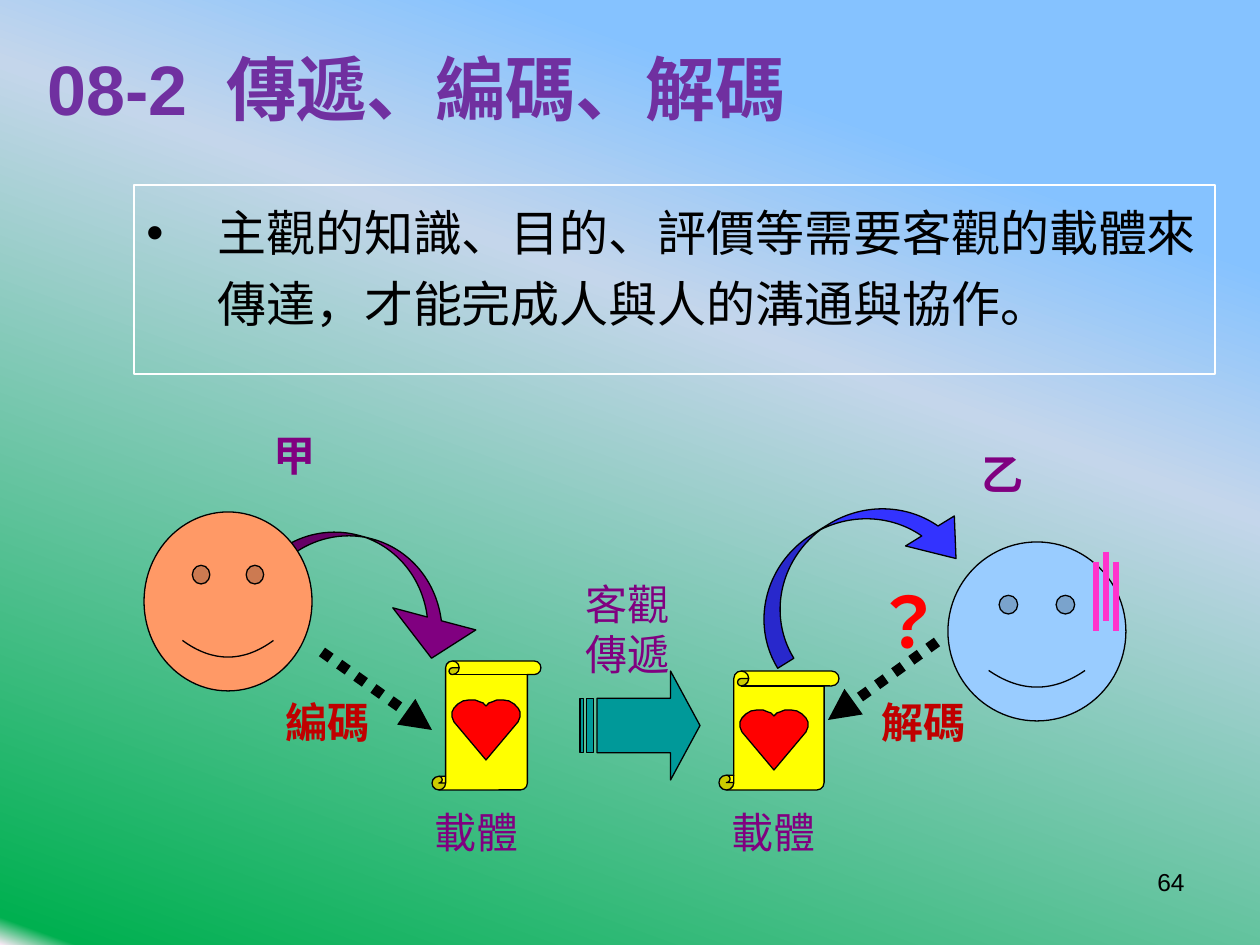
from dataclasses import dataclass

from lxml import etree
from pptx import Presentation
from pptx.dml.color import RGBColor
from pptx.enum.dml import MSO_LINE
from pptx.enum.shapes import MSO_CONNECTOR, MSO_SHAPE
from pptx.enum.text import MSO_ANCHOR, PP_ALIGN
from pptx.oxml.ns import qn
from pptx.util import Emu, Pt

EMU_PER_PX = 914400 / 126
BLANK_LAYOUT = 6
STRAIGHT = MSO_CONNECTOR.STRAIGHT
SCROLL = MSO_SHAPE.VERTICAL_SCROLL
CURVED_ARROW = MSO_SHAPE.CURVED_DOWN_ARROW
STRIPED_ARROW = MSO_SHAPE.STRIPED_RIGHT_ARROW
FACE = MSO_SHAPE.SMILEY_FACE
DOTTED = MSO_LINE.ROUND_DOT
LEFT, RIGHT = PP_ALIGN.LEFT, PP_ALIGN.RIGHT
TOP, MIDDLE = MSO_ANCHOR.TOP, MSO_ANCHOR.MIDDLE

LATIN_FONT = "Arial"
CJK_FONT = "Noto Sans CJK TC"

BLACK = RGBColor(0x00, 0x00, 0x00)
WHITE = RGBColor(0xFF, 0xFF, 0xFF)
TITLE_PURPLE = RGBColor(0x70, 0x30, 0xA0)
PURPLE = RGBColor(0x80, 0x00, 0x80)
DARK_RED = RGBColor(0xC0, 0x00, 0x00)
RED = RGBColor(0xFF, 0x00, 0x00)
YELLOW = RGBColor(0xFF, 0xFF, 0x00)
TEAL = RGBColor(0x00, 0x99, 0x99)
BLUE = RGBColor(0x33, 0x33, 0xFF)
LIGHT_BLUE = RGBColor(0x99, 0xCC, 0xFF)
ORANGE = RGBColor(0xFF, 0x99, 0x66)
PINK = RGBColor(0xFF, 0x33, 0xCC)

# Percent along the gradient, colour
BACKGROUND_STOPS = (
    (19, RGBColor(0x85, 0xC2, 0xFF)),
    (37, RGBColor(0xC4, 0xD6, 0xEB)),
    (98, RGBColor(0x00, 0xB0, 0x50)),
    (100, RGBColor(0xFF, 0xEB, 0xFA)),
)

# Right half of the heart, from the notch to the tip
HEART_HALF = ((0, 6), (3, 3), (6, 2), (11, 0), (17, 0), (23, 1), (28, 4),
              (32, 8), (34, 12), (34, 17), (32, 22), (0, 60))


@dataclass(frozen=True)
class Figure:
    preset: MSO_SHAPE
    box: tuple[int, int, int, int]
    fill: RGBColor
    rotation: float = 0
    adjustments: tuple[float, ...] = ()


@dataclass(frozen=True)
class Stroke:
    start: tuple[int, int]
    end: tuple[int, int]
    color: RGBColor
    width: int
    dotted_arrow: bool = False


@dataclass(frozen=True)
class Label:
    lines: tuple[str, ...]
    box: tuple[int, int, int, int]
    color: RGBColor
    size: int = 24
    bold: bool = False
    align: PP_ALIGN = RIGHT
    font: str = CJK_FONT
    wrap: bool = False
    anchor: MSO_ANCHOR = TOP


FIGURES = (
    Figure(SCROLL, (432, 661, 109, 129), YELLOW),
    Figure(CURVED_ARROW, (249, 540, 241, 100), PURPLE, 14.9, (0.146, 0.859, 0.387)),
    Figure(FACE, (948, 542, 178, 179), LIGHT_BLUE),
    Figure(FACE, (144, 512, 168, 179), ORANGE),
    Figure(STRIPED_ARROW, (580, 671, 120, 109), TEAL, 0, (0.5, 0.27)),
    Figure(SCROLL, (719, 671, 120, 119), YELLOW),
    Figure(CURVED_ARROW, (735, 517, 238, 96), BLUE, 328.4, (0.198, 0.597, 0.387)),
)

HEARTS = ((486, 700), (774, 710))

STROKES = (
    Stroke((937, 642), (828, 720), BLACK, 6, True),
    Stroke((322, 652), (432, 730), BLACK, 6, True),
    *(Stroke((x, y), (x, y + 69), PINK, 3)
      for x, y in ((1096, 562), (1106, 552), (1116, 562))),
)

TITLE = Label(("08-2  傳遞、編碼、解碼",), (35, 0, 1134, 175), TITLE_PURPLE, 40,
              True, LEFT, LATIN_FONT, True, MIDDLE)
BODY = Label(("主觀的知識、目的、評價等需要客觀的載體來傳達，才能完成人與人的溝通與協作。",),
             (134, 185, 1081, 189), BLACK, 28, False, LEFT, LATIN_FONT, True)
LABELS = (
    Label(("？",), (838, 572, 118, 97), RED, 40, True, wrap=True),
    Label(("客觀", "傳遞"), (571, 572, 111, 115), PURPLE),
    Label(("甲",), (260, 423, 68, 63), PURPLE, bold=True),
    Label(("乙",), (968, 442, 68, 63), PURPLE, bold=True),
    Label(("編碼",), (272, 690, 110, 63), DARK_RED, bold=True),
    Label(("解碼",), (868, 690, 110, 63), DARK_RED, bold=True),
    Label(("載體",), (422, 800, 111, 64), PURPLE, align=LEFT),
    Label(("載體",), (719, 800, 111, 64), PURPLE, align=LEFT),
    Label(("64",), (903, 861, 294, 66), BLACK, 14, font=LATIN_FONT, wrap=True),
)


def px(length: int) -> Emu:
    return Emu(round(length * EMU_PER_PX))


def paint_background(slide) -> None:
    fill = slide.background.fill
    fill.gradient()
    fill.gradient_angle = 250
    stops = slide.element.find(".//" + qn("a:gsLst"))
    for stop in list(stops):
        stops.remove(stop)
    for percent, color in BACKGROUND_STOPS:
        stop = etree.SubElement(stops, qn("a:gs"), pos=str(percent * 1000))
        etree.SubElement(stop, qn("a:srgbClr"), val=str(color))


def style_shape(shape, fill: RGBColor) -> None:
    shape.shadow.inherit = False
    shape.fill.solid()
    shape.fill.fore_color.rgb = fill
    shape.line.color.rgb = BLACK
    shape.line.width = Pt(0.75)


def add_figure(slide, figure: Figure) -> None:
    shape = slide.shapes.add_shape(figure.preset, *map(px, figure.box))
    shape.rotation = figure.rotation
    for index, value in enumerate(figure.adjustments):
        shape.adjustments[index] = value
    style_shape(shape, figure.fill)


def add_heart(slide, center: int, top: int) -> None:
    mirrored = [(-x, y) for x, y in HEART_HALF[-2:0:-1]]
    outline = [(center + x, top + y) for x, y in (*HEART_HALF, *mirrored)]
    builder = slide.shapes.build_freeform(*outline[0], scale=EMU_PER_PX)
    builder.add_line_segments(outline[1:], close=True)
    style_shape(builder.convert_to_shape(), RED)


def add_stroke(slide, stroke: Stroke) -> None:
    connector = slide.shapes.add_connector(
        STRAIGHT, *map(px, (*stroke.start, *stroke.end)))
    line = connector.line
    line.color.rgb = stroke.color
    line.width = Pt(stroke.width)
    if stroke.dotted_arrow:
        line.dash_style = DOTTED
        outline = connector.element.spPr.find(qn("a:ln"))
        etree.SubElement(outline, qn("a:tailEnd"), type="triangle")
    etree.SubElement(connector.element.spPr, qn("a:effectLst"))


def add_label(slide, label: Label):
    shape = slide.shapes.add_textbox(*map(px, label.box))
    frame = shape.text_frame
    frame.word_wrap = label.wrap
    frame.vertical_anchor = label.anchor
    for index, text in enumerate(label.lines):
        paragraph = frame.add_paragraph() if index else frame.paragraphs[0]
        paragraph.alignment = label.align
        run = paragraph.add_run()
        run.text = text
        font = run.font
        font.name = label.font
        font.size = Pt(label.size)
        font.bold = label.bold
        font.color.rgb = label.color
        etree.SubElement(run.font._element, qn("a:ea"), typeface=CJK_FONT)
    return shape


def add_body(slide) -> None:
    """Add the framed, bulleted statement."""
    shape = add_label(slide, BODY)
    shape.line.color.rgb = WHITE
    shape.line.width = Pt(0.75)
    paragraph = shape.text_frame.paragraphs[0]
    paragraph.line_spacing = 1.2
    paragraph.space_before = Pt(5.6)
    properties = paragraph._p.get_or_add_pPr()
    properties.set("marL", str(px(71)))
    properties.set("indent", str(-px(71)))
    etree.SubElement(properties, qn("a:buFont"), typeface=LATIN_FONT)
    etree.SubElement(properties, qn("a:buChar"), char="•")


def main() -> None:
    presentation = Presentation()
    presentation.slide_width = px(1260)
    presentation.slide_height = px(945)
    slide = presentation.slides.add_slide(presentation.slide_layouts[BLANK_LAYOUT])
    paint_background(slide)
    add_label(slide, TITLE)
    add_body(slide)
    for figure in FIGURES:
        add_figure(slide, figure)
    for center, top in HEARTS:
        add_heart(slide, center, top)
    for stroke in STROKES:
        add_stroke(slide, stroke)
    for label in LABELS:
        add_label(slide, label)
    presentation.save("out.pptx")


if __name__ == "__main__":
    main()
